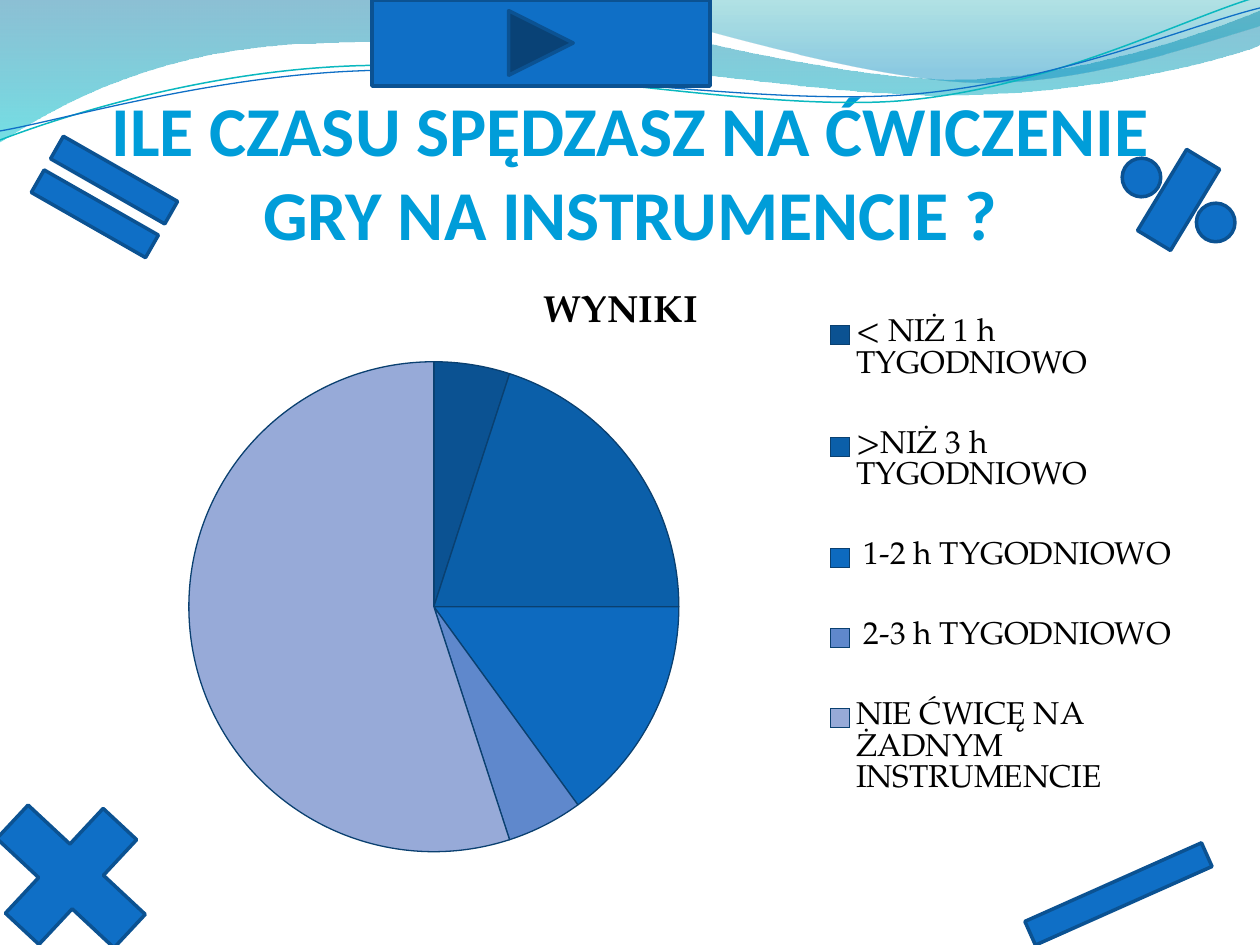
from dataclasses import dataclass

from lxml import etree
from pptx import Presentation
from pptx import util as u
from pptx.chart.data import CategoryChartData
from pptx.dml.color import RGBColor
from pptx.enum import chart as ch, shapes, text
from pptx.oxml import parse_xml
from pptx.oxml.ns import nsdecls, qn

PX = 914400 / 126


@dataclass(frozen=True)
class Theme:
    head: str = "009DD9"
    fill: str = "0F6FC6"
    edge: str = "0B5292"
    ink: str = "000000"
    rim: str = "0A4070"
    slices: tuple = ("0B5292", "0B5FA9", "0D6ABF", "5F88CC", "97AAD8")
    head_font: str = "Calibri"
    body_font: str = "TeX Gyre Pagella"
    head_size: int = 40
    body_size: int = 18
    title_size: float = 21.6


T = Theme()

# Each step is a line end (2 numbers) or a cubic curve (6 numbers).
BANDS = [
    ([(0, 0), (554, -1), (600, 21, 837, 79, 955, 79),
      (1074, 79, 1207, 33, 1260, 11), (1261, 45),
      (1239, 55, 1096, 96, 940, 95), (784, 95, 481, 35, 324, 43),
      (163, 45, 58, 105, -1, 142)],
     [(0, "0074A1", 45), (1, "00C6CF", 55)]),
    ([(604, -1), (641, 14, 859, 78, 969, 82),
      (1079, 87, 1211, 40, 1260, 26), (1260, 0)],
     [(0, "00A1A9", 30), (0.8, "008BBF", 45)]),
]
LINES = [
    ([(0, 140), (60, 117, 199, 72, 349, 66), (498, 59, 747, 112, 898, 101),
      (1049, 89, 1182, 19, 1257, -3)], "0AB8BF", 0.85),
    ([(0, 131), (59, 121, 207, 77, 357, 71), (508, 64, 752, 106, 903, 95),
      (1053, 84, 1187, 26, 1260, 8)], "0F6FC6", 0.75),
]
DATA = [
    ("< NIŻ 1 h TYGODNIOWO", 5),
    (">NIŻ 3 h TYGODNIOWO", 20),
    (" 1-2 h TYGODNIOWO", 15),
    (" 2-3 h TYGODNIOWO", 5),
    ("NIE ĆWICĘ NA ŻADNYM INSTRUMENCIE", 55),
]
KIND = shapes.MSO_SHAPE
SIGNS = [
    (KIND.MATH_EQUAL, (15, 142, 179, 110), 29.7),
    (KIND.MATH_DIVIDE, (1114, 118, 129, 164), 121.2),
    (KIND.MATH_PLUS, (-38, 779, 218, 195), 43),
    (KIND.MATH_MINUS, (987, 839, 263, 110), 336),
    (KIND.ACTION_BUTTON_FORWARD_OR_NEXT, (372, 0, 338, 86), 0),
]


def emu(box):
    return [u.Emu(round(n * PX)) for n in box]


def rgb(code):
    return RGBColor.from_string(code)


def stroke(line, code, width):
    line.color.rgb = rgb(code)
    line.width = u.Pt(width)


def add_path(slide, steps, close):
    """Build the outline, then join each curve's three points into a cubic."""
    pen = slide.shapes.build_freeform(*steps[0], scale=PX)
    for step in steps[1:]:
        pen.add_line_segments(list(zip(step[::2], step[1::2])), close=False)
    shape = pen.convert_to_shape()
    shape.shadow.inherit = False
    track = next(shape._element.iter(qn("a:path")))
    legs = iter(track.findall(qn("a:lnTo")))
    for step in steps[1:]:
        group = [next(legs) for _ in step[::2]]
        if len(group) == 3:
            curve = etree.Element(qn("a:cubicBezTo"))
            group[0].addprevious(curve)
            for leg in group:
                curve.append(leg[0])
                track.remove(leg)
    if close:
        etree.SubElement(track, qn("a:close"))
    return shape


def add_waves(slide):
    for steps, stops in BANDS:
        band = add_path(slide, steps, True)
        band.line.fill.background()
        band.fill.gradient()
        band.fill.gradient_angle = 270
        for stop, (pos, code, _) in zip(band.fill.gradient_stops, stops):
            stop.position = pos
            stop.color.rgb = rgb(code)
        for node, (_, _, alpha) in zip(band._element.iter(qn("a:srgbClr")), stops):
            etree.SubElement(node, qn("a:alpha"), val=str(alpha * 1000))
    for steps, code, width in LINES:
        line = add_path(slide, steps, False)
        line.fill.background()
        stroke(line.line, code, width)


def style(font, name, size, code, bold=False):
    font.name, font.size, font.bold = name, u.Pt(size), bold
    font.color.rgb = rgb(code)


def add_head(slide, box):
    head = slide.shapes.title
    head.left, head.top, head.width, head.height = emu(box)
    frame = head.text_frame
    frame.auto_size = text.MSO_AUTO_SIZE.NONE
    frame.word_wrap = True
    frame.vertical_anchor = text.MSO_ANCHOR.BOTTOM
    frame.margin_left = frame.margin_right = frame.margin_bottom = 0
    frame.margin_top = u.Inches(0.05)
    para = frame.paragraphs[0]
    para.alignment = text.PP_ALIGN.CENTER
    run = para.add_run()
    run.text = "ILE CZASU SPĘDZASZ NA ĆWICZENIE GRY NA INSTRUMENCIE ?"
    style(run.font, T.head_font, T.head_size, T.head, True)
    run.font._element.insert(0, parse_xml(
        f'<a:ln {nsdecls("a")} w="{u.Pt(1.42)}"><a:solidFill>'
        f'<a:srgbClr val="{T.head}"/></a:solidFill></a:ln>'))


def layout(x, y, w, h, inner=False):
    """Manual chart layout in shares of the chart's box."""
    target = '<c:layoutTarget val="inner"/>' if inner else ""
    return parse_xml(
        f'<c:layout {nsdecls("c")}><c:manualLayout>{target}'
        '<c:xMode val="edge"/><c:yMode val="edge"/>'
        f'<c:x val="{x}"/><c:y val="{y}"/><c:w val="{w}"/><c:h val="{h}"/>'
        '</c:manualLayout></c:layout>')


def place(node, spot, at):
    for old in node.findall(qn("c:layout")):
        node.remove(old)
    node.insert(at, spot)


def add_pie(slide, box):
    data = CategoryChartData()
    data.categories = [name for name, _ in DATA]
    data.add_series("WYNIKI", [val for _, val in DATA])
    chart = slide.shapes.add_chart(ch.XL_CHART_TYPE.PIE, *emu(box), data).chart
    style(chart.font, T.body_font, T.body_size, T.ink)

    chart.has_title = True
    run = chart.chart_title.text_frame.paragraphs[0].add_run()
    run.text = "WYNIKI"
    style(run.font, T.body_font, T.title_size, T.ink, True)
    chart.chart_title.include_in_layout = False

    chart.has_legend = True
    key = chart.legend
    key.position = ch.XL_LEGEND_POSITION.RIGHT
    key.include_in_layout = False
    place(key._element, layout(0.68, 0.01, 0.31, 0.95), 1)

    plot = chart.plots[0]
    plot.vary_by_categories = True
    place(plot._element.getparent(), layout(0.11, 0.16, 0.45, 0.81, True), 0)
    for i, code in enumerate(T.slices):
        form = plot.series[0].points[i].format
        form.fill.solid()
        form.fill.fore_color.rgb = rgb(code)
        stroke(form.line, T.rim, 0.75)


def add_signs(slide):
    for kind, box, turn in SIGNS:
        sign = slide.shapes.add_shape(kind, *emu(box))
        sign.rotation = turn
        sign.shadow.inherit = False
        sign.fill.solid()
        sign.fill.fore_color.rgb = rgb(T.fill)
        stroke(sign.line, T.edge, 2)


def main():
    deck = Presentation()
    deck.slide_width, deck.slide_height = emu((1260, 945))
    slide = deck.slides.add_slide(deck.slide_layouts[5])
    add_waves(slide)
    add_head(slide, (63, 97, 1134, 158))
    add_pie(slide, (54, 265, 1134, 605))
    add_signs(slide)
    deck.save("out.pptx")


if __name__ == "__main__":
    main()
